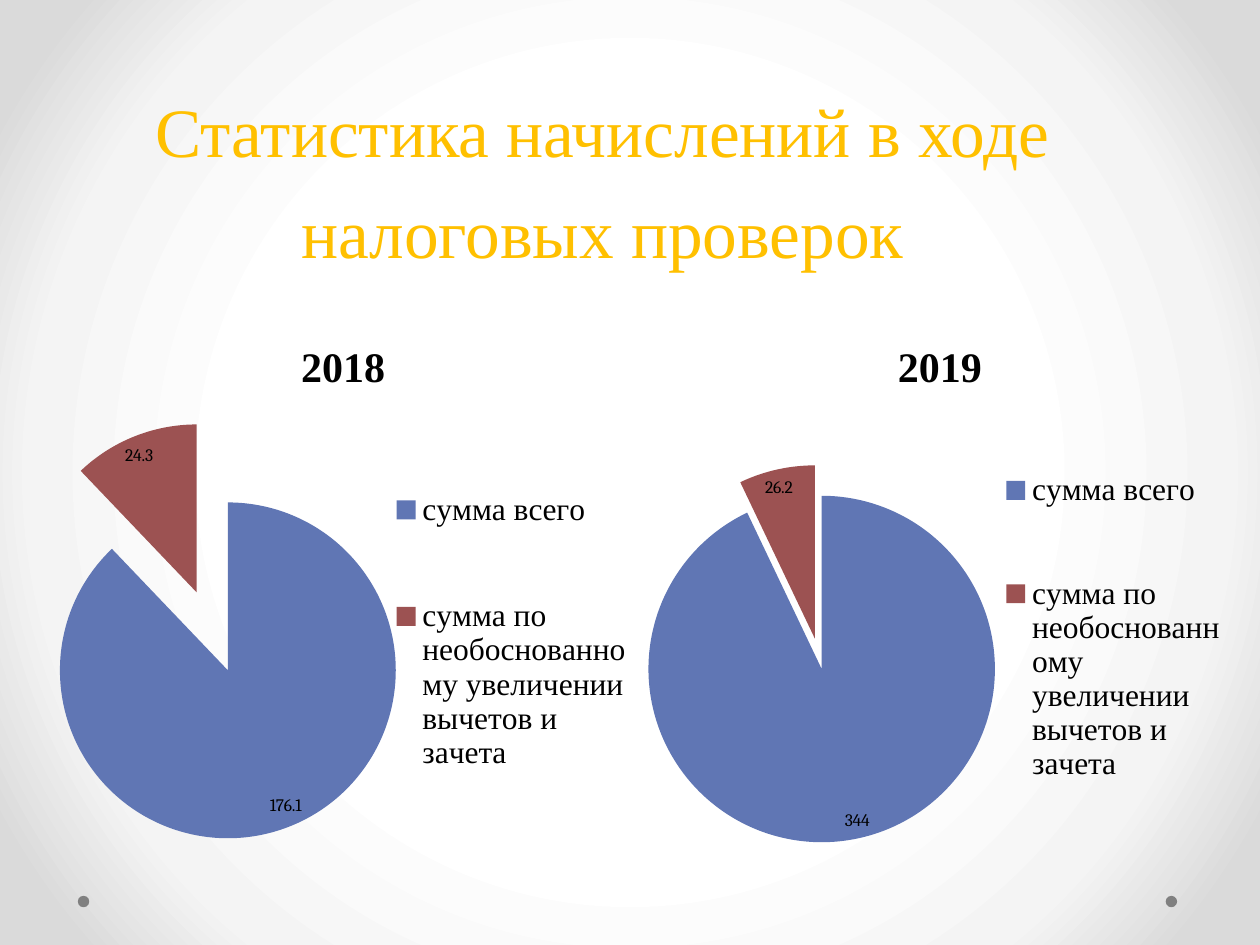
from lxml import etree
from pptx import Presentation
from pptx.chart.data import CategoryChartData
from pptx.dml.color import RGBColor
from pptx.enum import chart as ch, shapes, text
from pptx.oxml import parse_xml
from pptx.oxml.ns import nsdecls, qn
from pptx.util import Cm, Pt

SERIF = "Times New Roman"
CATS = ["сумма всего", "сумма по необоснованному увеличении вычетов и зачета"]
SLICES = ["6076B4", "9C5252"]
GLOW = [(50, "FFFFFF"), (76, "F4F4F4"), (92, "DADADA")]

# head, plot and key are percentages of the chart frame.
PIES = [
    dict(year="2018", vals=[176.1, 24.3], burst=25,
         box=(-0.3, 6.32, 14.4, 11.05), head=(43.2, 3.3),
         plot=(2.4, 19.7, 58.8, 76.6), key=(57, 19.5, 33.3, 77)),
    dict(year="2019", vals=[344, 26.2], burst=9,
         box=(12.29, 6.32, 13.31, 11.4), head=(42.5, 3.2),
         plot=(3, 26.7, 57.2, 67), key=(59.5, 16, 33.5, 79)),
]


def color(code):
    return RGBColor.from_string(code)


def style(font, size, name=SERIF, fill="000000", bold=False):
    font.size, font.name, font.bold = Pt(size), name, bold
    font.color.rgb = color(fill)


def write(frame, words, align=None, lead=None, **look):
    """Fill a text frame with one formatted paragraph."""
    par = frame.paragraphs[0]
    run = par.add_run()
    run.text = words
    par.alignment = align
    if lead:
        par.line_spacing = Pt(lead)
    style(run.font, **look)


def paint(slide):
    """Give the slide a glow that darkens from its centre."""
    slide.background.fill.gradient()
    grad = slide.element.find(".//" + qn("a:gradFill"))
    stops = "".join(
        f'<a:gs pos="{pos * 1000}"><a:srgbClr val="{code}"/></a:gs>'
        for pos, code in GLOW)
    new = parse_xml(
        f'<a:gradFill {nsdecls("a")} rotWithShape="1"><a:gsLst>{stops}</a:gsLst>'
        '<a:path path="circle"><a:fillToRect l="50000" t="50000" r="50000" '
        'b="50000"/></a:path></a:gradFill>')
    grad.getparent().replace(grad, new)


def dot(slide, left):
    mark = slide.shapes.add_shape(
        shapes.MSO_SHAPE.OVAL, Cm(left), Cm(18.06), Cm(0.23), Cm(0.23))
    mark.shadow.inherit = False
    mark.fill.solid()
    mark.fill.fore_color.rgb = color("808080")
    mark.line.fill.background()


def place(node, index, box, inner=False):
    """Set the manual layout of a chart part, given in percent."""
    for old in node.findall(qn("c:layout")):
        node.remove(old)
    root = parse_xml(f'<c:layout {nsdecls("c")}><c:manualLayout/></c:layout>')
    if inner:
        etree.SubElement(root[0], qn("c:layoutTarget")).set("val", "inner")
    for tag in ("xMode", "yMode"):
        etree.SubElement(root[0], qn("c:" + tag)).set("val", "edge")
    for tag, val in zip("xywh", box):
        etree.SubElement(root[0], qn("c:" + tag)).set("val", f"{val / 100:.3f}")
    node.insert(index, root)


def pie(slide, year, vals, burst, box, head, plot, key):
    data = CategoryChartData()
    data.categories = CATS
    data.add_series(year, vals)
    chart = slide.shapes.add_chart(
        ch.XL_CHART_TYPE.PIE, *map(Cm, box), data).chart
    style(chart.font, 10, name="Cambria")

    chart.has_title = True
    write(chart.chart_title.text_frame, year, size=24, bold=True)

    chart.has_legend = True
    chart.legend.position = ch.XL_LEGEND_POSITION.RIGHT
    chart.legend.include_in_layout = False
    style(chart.legend.font, 18)

    ser = chart.plots[0].series[0]
    ser.format.line.fill.background()
    for i, code in enumerate(SLICES):
        form = ser.points[i].format
        form.fill.solid()
        form.fill.fore_color.rgb = color(code)
        form.line.fill.background()
    gap = etree.Element(qn("c:explosion"), val=str(burst))
    chart.element.find(".//" + qn("c:dPt")).addprevious(gap)

    tags = ser.data_labels
    tags.show_value = True
    tags.position = ch.XL_LABEL_POSITION.BEST_FIT
    style(tags.font, 10, name="Cambria")

    root = chart.element.find(qn("c:chart"))
    place(root.find(qn("c:title")), 1, head)
    place(root.find(qn("c:legend")), 1, key)
    place(root.find(qn("c:plotArea")), 0, plot, inner=True)


def title(slide, words):
    head = slide.shapes.title
    head.left, head.top, head.width, head.height = map(
        Cm, (2.34, 1.73, 19.61, 3.89))
    frame = head.text_frame
    frame.word_wrap = True
    frame.auto_size = text.MSO_AUTO_SIZE.NONE
    frame.vertical_anchor = text.MSO_ANCHOR.BOTTOM
    write(frame, words, align=text.PP_ALIGN.CENTER, lead=58,
          size=39.6, fill="FFC000")


def main():
    deck = Presentation()
    deck.slide_width, deck.slide_height = Cm(25.4), Cm(19.05)
    slide = deck.slides.add_slide(deck.slide_layouts[5])
    paint(slide)
    for left in (23.5, 1.57):
        dot(slide, left)
    title(slide, "Статистика начислений в ходе налоговых проверок")
    for item in PIES:
        pie(slide, **item)
    deck.save("out.pptx")


if __name__ == "__main__":
    main()
